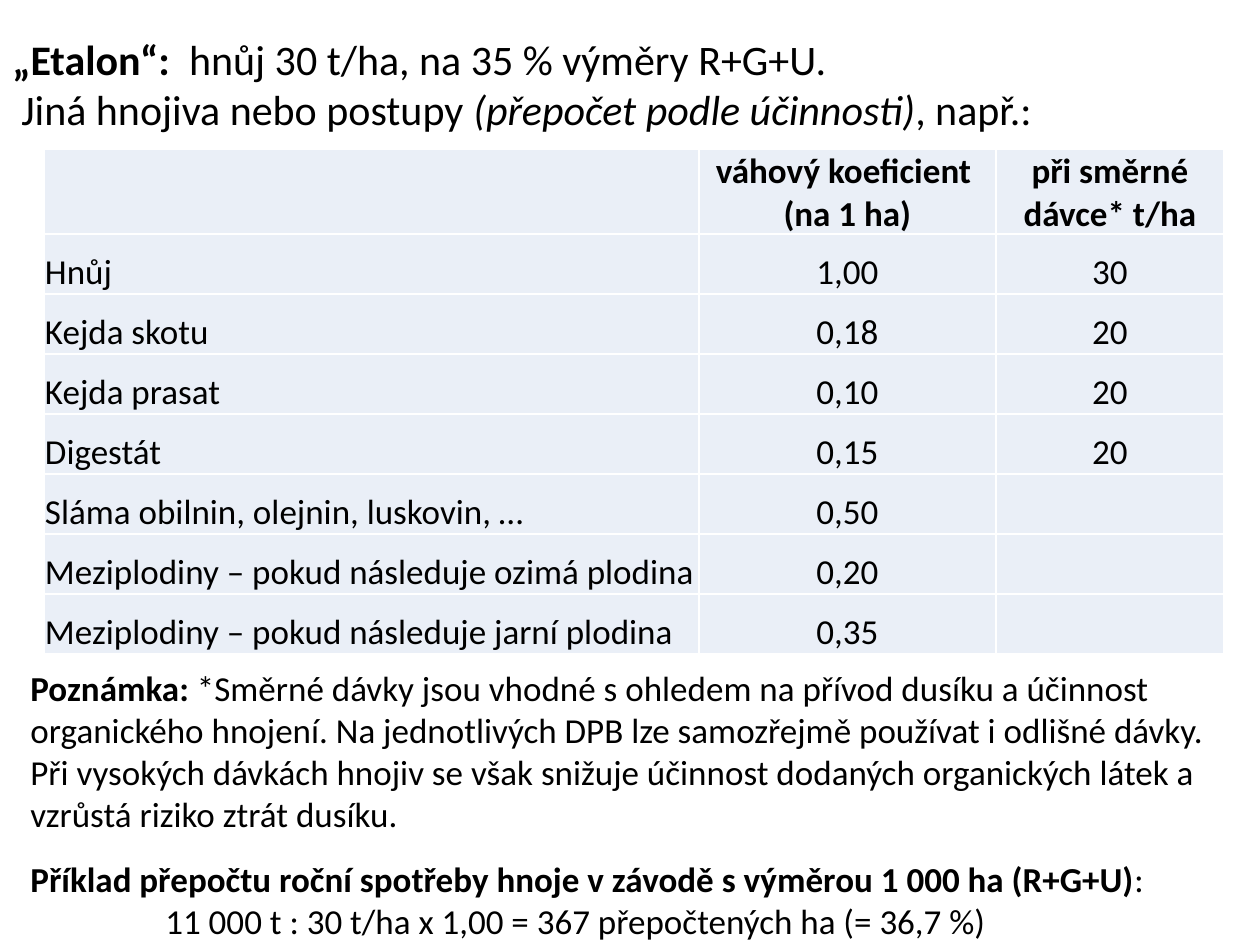
from lxml import etree
from pptx import Presentation
from pptx.dml.color import RGBColor
from pptx.enum.text import MSO_ANCHOR, PP_ALIGN
from pptx.oxml.ns import qn
from pptx.util import Emu, Pt

EMU_PER_PX = 914400 // 126
CENTER, LEFT = PP_ALIGN.CENTER, PP_ALIGN.LEFT
MIDDLE, BOTTOM = MSO_ANCHOR.MIDDLE, MSO_ANCHOR.BOTTOM
FONT = "Calibri"
COLORS = {"text": "000000", "cell": "EAEFF7", "border": "FFFFFF"}

COLUMN_WIDTHS = [655, 297, 228]
HEADER_HEIGHT, ROW_HEIGHT = 84, 60
HEADER = ["", "váhový koeficient \n(na 1 ha)", "při směrné dávce* t/ha"]
FERTILIZERS = [
    ["Hnůj", "1,00", "30"],
    ["Kejda skotu", "0,18", "20"],
    ["Kejda prasat", "0,10", "20"],
    ["Digestát", "0,15", "20"],
    ["Sláma obilnin, olejnin, luskovin, …", "0,50", ""],
    ["Meziplodiny – pokud následuje ozimá plodina", "0,20", ""],
    ["Meziplodiny – pokud následuje jarní plodina", "0,35", ""],
]


def px(length):
    return Emu(length * EMU_PER_PX)


def add_run(paragraph, text, size, bold=False, italic=False):
    run = paragraph.add_run()
    run.text = text
    font = run.font
    font.name, font.size, font.bold, font.italic = FONT, Pt(size), bold, italic
    font.color.rgb = RGBColor.from_string(COLORS["text"])


def add_text(slide, left, top, width, height, size, paragraphs):
    """Each paragraph is (indent in px, space before in pt, runs)."""
    frame = slide.shapes.add_textbox(px(left), px(top), px(width), px(height)).text_frame
    frame.word_wrap = True
    for index, (indent, space_before, runs) in enumerate(paragraphs):
        paragraph = frame.add_paragraph() if index else frame.paragraphs[0]
        paragraph.space_before = Pt(space_before)
        if indent:
            paragraph._p.get_or_add_pPr().set("indent", str(px(indent)))
        for text, *style in runs:
            add_run(paragraph, text, size, *style)


def set_borders(cell):
    properties = cell._tc.get_or_add_tcPr()
    for position, side in enumerate(("lnL", "lnR", "lnT", "lnB")):
        line = etree.Element(qn("a:" + side), w=str(Pt(1)))
        fill = etree.SubElement(line, qn("a:solidFill"))
        etree.SubElement(fill, qn("a:srgbClr"), val=COLORS["border"])
        properties.insert(position, line)


def fill_cell(cell, text, alignment, anchor, bold):
    cell.fill.solid()
    cell.fill.fore_color.rgb = RGBColor.from_string(COLORS["cell"])
    set_borders(cell)
    cell.margin_left = cell.margin_right = cell.margin_top = px(1)
    cell.margin_bottom = 0
    cell.vertical_anchor = anchor
    paragraph = cell.text_frame.paragraphs[0]
    paragraph.alignment = alignment
    if not text:
        return
    for index, line in enumerate(text.split("\n")):
        if index:
            paragraph.add_line_break()
        add_run(paragraph, line, 20, bold)


def add_coefficient_table(slide, left, top):
    rows = [HEADER] + FERTILIZERS
    height = HEADER_HEIGHT + ROW_HEIGHT * len(FERTILIZERS)
    table = slide.shapes.add_table(
        len(rows), len(HEADER), px(left), px(top), px(sum(COLUMN_WIDTHS)), px(height)
    ).table
    for column, width in zip(table.columns, COLUMN_WIDTHS):
        column.width = px(width)
    for row_index, texts in enumerate(rows):
        is_header = row_index == 0
        table.rows[row_index].height = px(HEADER_HEIGHT if is_header else ROW_HEIGHT)
        for column_index, text in enumerate(texts):
            fill_cell(
                table.cell(row_index, column_index),
                text,
                CENTER if column_index else LEFT,
                MIDDLE if is_header and column_index == 1 else BOTTOM,
                is_header,
            )


def main():
    presentation = Presentation()
    presentation.slide_width, presentation.slide_height = px(1260), px(945)
    slide = presentation.slides.add_slide(presentation.slide_layouts[6])
    add_text(slide, 0, 27, 1265, 114, 24, [
        (0, 0, [("„Etalon“: ", True), (" hnůj 30 t/ha, na 35 % výměry R+G+U.",)]),
        (9, 0, [
            ("Jiná hnojiva nebo postupy ",),
            ("(přepočet podle účinnosti)", False, True),
            (", např.:",),
        ]),
    ])
    add_coefficient_table(slide, 44, 149)
    add_text(slide, 18, 660, 1231, 292, 20, [
        (0, 0, [
            ("Poznámka: ", True),
            ("*Směrné dávky jsou vhodné s ohledem na přívod dusíku a účinnost "
             "organického hnojení. Na jednotlivých DPB lze samozřejmě používat i "
             "odlišné dávky. Při vysokých dávkách hnojiv se však snižuje účinnost "
             "dodaných organických látek a vzrůstá riziko ztrát dusíku.",),
        ]),
        (0, 13, [
            ("Příklad přepočtu roční spotřeby hnoje v závodě s výměrou "
             "1 000 ha (R+G+U)", True),
            (":",),
        ]),
        (135, 0, [("11 000 t : 30 t/ha x 1,00 = 367 přepočtených ha (= 36,7 %)",)]),
    ])
    presentation.save("out.pptx")


if __name__ == "__main__":
    main()
